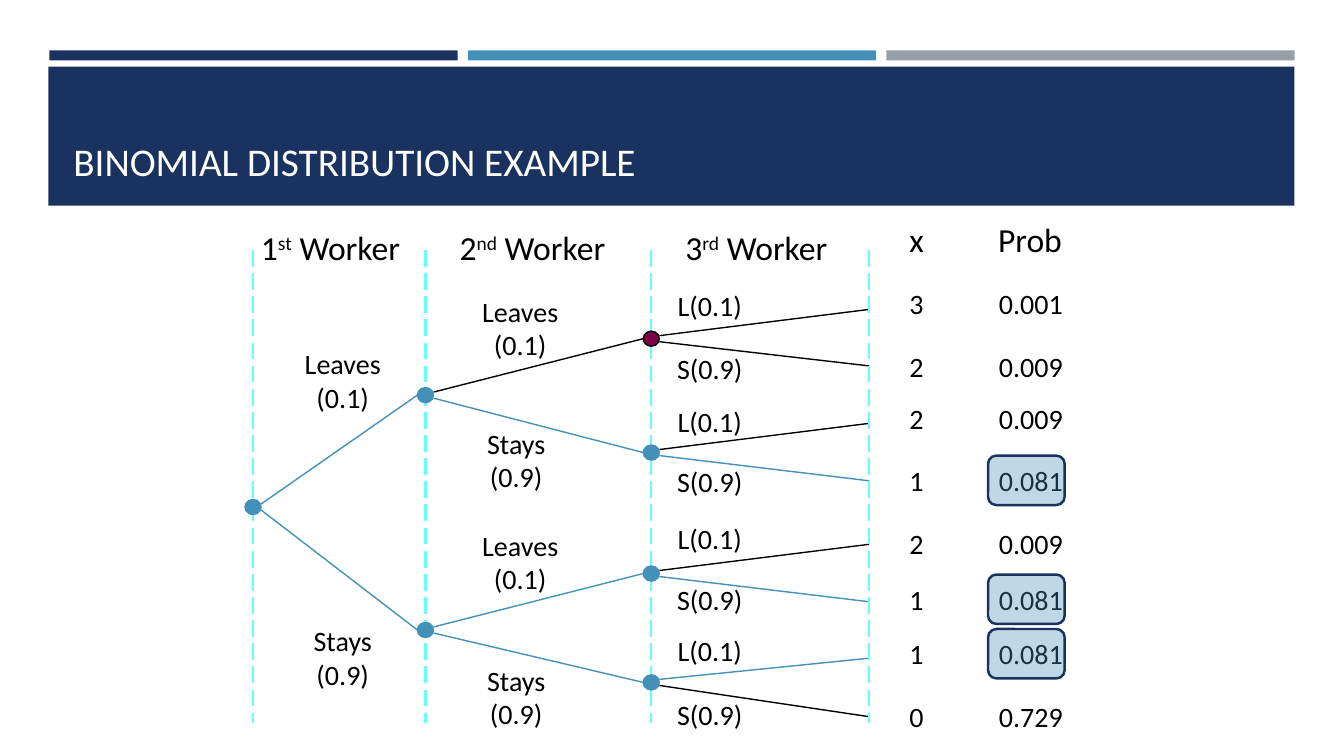
import pptx
import pptx.dml.color
import pptx.enum.dml
import pptx.enum.shapes
import pptx.enum.text
import pptx.oxml.ns
import pptx.util
from lxml import etree

RGB = pptx.dml.color.RGBColor
NAVY = RGB(0x1A, 0x32, 0x60)
BLUE = RGB(0x45, 0x90, 0xB8)
GRAY = RGB(0x96, 0x9F, 0xA7)
CYAN = RGB(0x66, 0xFF, 0xFF)
MAROON = RGB(0x7E, 0x00, 0x48)
BLACK = RGB(0, 0, 0)
WHITE = RGB(0xFF, 0xFF, 0xFF)
SHAPE = pptx.enum.shapes.MSO_SHAPE
ALIGN = pptx.enum.text.PP_ALIGN
ANCHOR = pptx.enum.text.MSO_ANCHOR

# The slide is a grid of 13.33 columns by 7.5 rows, each cell one inch square.
COLUMNS, ROWS, CELL = 13.33, 7.5, pptx.util.Inches(1)

TITLE = "BINOMIAL DISTRIBUTION EXAMPLE"
WORKERS = [("1", "st", 2.49), ("2", "nd", 4.46), ("3", "rd", 6.7)]
OUTCOMES = [
    # leavers, probability, row of the text
    (3, "0.001", 2.79), (2, "0.009", 3.42), (2, "0.009", 3.93), (1, "0.081", 4.55),
    (2, "0.009", 5.17), (1, "0.081", 5.73), (1, "0.081", 6.27), (0, "0.729", 6.89),
]
STAGE_COLUMNS = [2.51, 4.22, 6.46, 8.62]
STAGE_ROWS = [
    [5.03],
    [3.92, 6.25],
    [3.36, 4.49, 5.69, 6.77],
    [3.07, 3.63, 4.2, 4.77, 5.4, 5.97, 6.53, 7.11],
]
BRANCH_LABELS = [
    # (leaving, staying) text, centre columns, rows from top to bottom
    (("Leaves\n(0.1)", "Stays\n(0.9)"), (3.4, 3.4), [3.39, 6.14]),
    (("Leaves\n(0.1)", "Stays\n(0.9)"), (5.16, 5.12), [2.87, 4.18, 5.19, 6.53]),
    (("L(0.1)", "S(0.9)"), (7.04, 7.04),
     [2.81, 3.44, 3.96, 4.56, 5.12, 5.73, 6.24, 6.87]),
]
HIGHLIGHTED_LEAVERS = 1
NODE_WIDTH, NODE_HEIGHT = 0.16, 0.15
GUIDE_TOP, GUIDE_BOTTOM = 2.48, 7.17


def cells(*counts):
    return [round(count * CELL) for count in counts]


def add_block(page, kind, area, fill, outline=None, weight=1, opacity=None):
    block = page.shapes.add_shape(kind, *cells(*area))
    block.shadow.inherit = False
    block.fill.solid()
    block.fill.fore_color.rgb = fill
    if opacity:
        color = block.fill._xPr.find(".//" + pptx.oxml.ns.qn("a:srgbClr"))
        alpha = etree.SubElement(color, pptx.oxml.ns.qn("a:alpha"))
        alpha.set("val", str(opacity * 1000))
    if outline is None:
        block.line.fill.background()
    else:
        block.line.color.rgb = outline
        block.line.width = pptx.util.Pt(weight)


def add_line(page, start, end, color, weight=1, dash=None):
    line = page.shapes.add_connector(
        pptx.enum.shapes.MSO_CONNECTOR.STRAIGHT, *cells(*start, *end))
    line.line.color.rgb = color
    line.line.width = pptx.util.Pt(weight)
    if dash:
        line.line.dash_style = dash
    etree.SubElement(line._element.spPr, pptx.oxml.ns.qn("a:effectLst"))


def add_text(page, text, area, size=20, color=BLACK, align=ALIGN.LEFT,
             anchor=ANCHOR.TOP):
    """Write text, a new paragraph per line; a part between ^ marks is raised."""
    box = page.shapes.add_textbox(*cells(*area))
    frame = box.text_frame
    frame.word_wrap = True
    frame.vertical_anchor = anchor
    for number, words in enumerate(text.split("\n")):
        para = frame.add_paragraph() if number else frame.paragraphs[0]
        para.alignment = align
        for part, piece in enumerate(words.split("^")):
            span = para.add_run()
            span.text = piece
            span.font.name = "Calibri"
            span.font.size = pptx.util.Pt(size)
            span.font.color.rgb = color
            if part % 2:
                span.font._element.set("baseline", "30000")


def is_highlighted(stage, index):
    """Tell whether a node leads to an outcome with the highlighted count."""
    span = len(OUTCOMES) // 2 ** stage
    below = OUTCOMES[index * span:(index + 1) * span]
    return any(leavers == HIGHLIGHTED_LEAVERS for leavers, _, _ in below)


def add_header(page):
    for index, color in enumerate((NAVY, BLUE, GRAY)):
        add_block(page, SHAPE.RECTANGLE, (0.49 + 4.15 * index, 0.5, 4.05, 0.1), color)
    add_block(page, SHAPE.RECTANGLE, (0.48, 0.66, 12.36, 1.38), NAVY)
    add_text(page, TITLE, (0.63, 0.8, 12.06, 1.08), size=28, color=WHITE,
             anchor=ANCHOR.BOTTOM)


def add_tree(page):
    last = len(STAGE_COLUMNS) - 1
    for stage in range(1, last + 1):
        for index, row in enumerate(STAGE_ROWS[stage]):
            parent_row = STAGE_ROWS[stage - 1][index // 2]
            start = (STAGE_COLUMNS[stage - 1] + NODE_WIDTH / 2,
                     parent_row + (0.03 if index % 2 else -0.03))
            gap = 0 if stage == last else NODE_WIDTH / 2
            color = BLUE if is_highlighted(stage, index) else BLACK
            add_line(page, start, (STAGE_COLUMNS[stage] - gap, row), color)

    for column in STAGE_COLUMNS:
        add_line(page, (column, GUIDE_TOP), (column, GUIDE_BOTTOM), CYAN, weight=1.5,
                 dash=pptx.enum.dml.MSO_LINE.LONG_DASH)

    for stage, column in enumerate(STAGE_COLUMNS[:last]):
        for index, row in enumerate(STAGE_ROWS[stage]):
            fill, outline = (BLUE, BLUE) if is_highlighted(stage, index) else (MAROON, BLACK)
            area = (column - NODE_WIDTH / 2, row - NODE_HEIGHT / 2, NODE_WIDTH, NODE_HEIGHT)
            add_block(page, SHAPE.OVAL, area, fill, outline)

    for texts, centers, rows in BRANCH_LABELS:
        for index, row in enumerate(rows):
            text, center = texts[index % 2], centers[index % 2]
            height = 0.44 + 0.33 * text.count("\n")
            add_text(page, text, (center - 0.55, row, 1.1, height), align=ALIGN.CENTER)


def add_outcomes(page):
    for number, ending, column in WORKERS:
        add_text(page, f"{number}^{ending}^ Worker", (column, 2.2, 1.8, 0.5), size=24)
    for heading, column in (("x", 8.92), ("Prob", 9.8)):
        add_text(page, heading, (column, 2.12, 0.91, 0.5), size=24)
    for leavers, probability, row in OUTCOMES:
        add_text(page, str(leavers), (8.92, row, 0.36, 0.44))
        add_text(page, probability, (9.81, row, 0.9, 0.44))
        if leavers == HIGHLIGHTED_LEAVERS:
            add_block(page, SHAPE.ROUNDED_RECTANGLE, (9.8, row - 0.03, 0.76, 0.49),
                      BLUE, NAVY, weight=1.75, opacity=35)


def main():
    deck = pptx.Presentation()
    deck.slide_width, deck.slide_height = cells(COLUMNS, ROWS)
    page = deck.slides.add_slide(deck.slide_layouts[6])
    add_header(page)
    add_tree(page)
    add_outcomes(page)
    deck.save("out.pptx")


if __name__ == "__main__":
    main()
